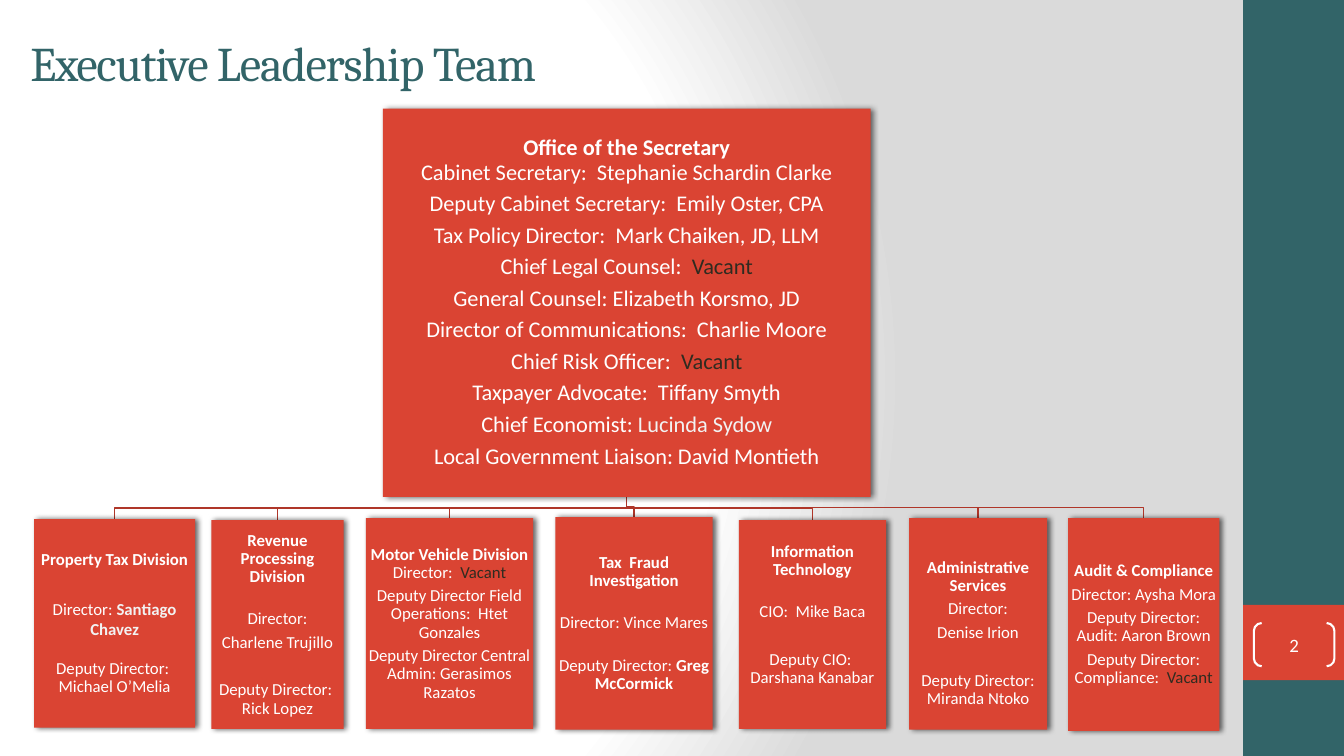
from dataclasses import dataclass

from pptx import Presentation
from pptx.dml.color import RGBColor
from pptx.enum.shapes import MSO_SHAPE
from pptx.enum.text import MSO_ANCHOR, PP_ALIGN
from pptx.oxml import parse_xml
from pptx.oxml.ns import nsdecls, qn
from pptx.util import Cm, Pt

RECTANGLE = MSO_SHAPE.RECTANGLE
DOUBLE_BRACKET = MSO_SHAPE.DOUBLE_BRACKET
MIDDLE = MSO_ANCHOR.MIDDLE
CENTER, LEFT = PP_ALIGN.CENTER, PP_ALIGN.LEFT

TEAL = RGBColor(0x32, 0x64, 0x68)
RED = RGBColor(0xDA, 0x44, 0x33)
DARK_RED = RGBColor(0xAF, 0x36, 0x29)
WHITE = RGBColor(0xFF, 0xFF, 0xFF)
OFF_WHITE = RGBColor(0xF2, 0xF2, 0xF2)
DARK = RGBColor(0x2F, 0x2B, 0x20)

BODY_FONT, TITLE_FONT = "Calibri", "Cambria"
LINE_GAP = 13.2   # one line of division text, in points
BLOCK_GAP = 17.2  # one line and its paragraph spacing


@dataclass
class Entry:
    """One paragraph of a box: a plain part, then an optional accented part."""
    text: str
    accent: str = ""
    bold: bool = False
    accent_bold: bool = False
    accent_color: RGBColor = WHITE
    before: float = 0
    after_ratio: float = 0.33
    line_spacing: float = 0.9


def heading(text, **options):
    return Entry(text, bold=True, **options)


def vacant(text, **options):
    return Entry(text, "Vacant", accent_color=DARK, **options)


@dataclass
class Unit:
    """A box of the chart: left, top, width and height in centimetres."""
    box: tuple
    entries: list
    size: float = 12
    inset_top: float = 0.03
    inset_bottom: float = 0.03


OFFICE = Unit((9.65, 2.74, 12.29, 9.78), [
    heading("Office of the Secretary", after_ratio=0),
    Entry("Cabinet Secretary:  Stephanie Schardin Clarke"),
    Entry("Deputy Cabinet Secretary:  Emily Oster, CPA"),
    Entry("Tax Policy Director:  Mark Chaiken, JD, LLM"),
    vacant("Chief Legal Counsel:  "),
    Entry("General Counsel: Elizabeth Korsmo, JD"),
    Entry("Director of Communications:  Charlie Moore"),
    vacant("Chief Risk Officer:  "),
    Entry("Taxpayer Advocate:  Tiffany Smyth"),
    Entry("Chief Economist: ", "Lucinda Sydow", accent_color=OFF_WHITE),
    Entry("Local Government Liaison: David Montieth"),
], size=16)

DIVISIONS = [
    Unit((0.86, 13.08, 4.06, 5.26), [
        heading("Property Tax Division"),
        Entry("Director: ", "Santiago Chavez", accent_bold=True,
              accent_color=OFF_WHITE, before=BLOCK_GAP, after_ratio=0, line_spacing=1),
        Entry("Deputy Director:  Michael O’Melia", before=14.6),
    ]),
    Unit((5.33, 13.11, 3.33, 5.26), [
        heading("Revenue Processing Division"),
        Entry("Director:", before=LINE_GAP),
        Entry("Charlene Trujillo"),
        Entry("Deputy Director:  Rick Lopez", before=BLOCK_GAP),
    ]),
    Unit((9.22, 13.06, 4.22, 5.31), [
        heading("Motor Vehicle Division", after_ratio=0),
        vacant("Director:  "),
        Entry("Deputy Director Field Operations:  Htet Gonzales"),
        Entry("Deputy Director Central Admin: Gerasimos Razatos"),
    ]),
    Unit((14, 13.03, 3.96, 5.36), [
        heading("Tax  Fraud Investigation"),
        Entry("Director: Vince Mares", before=LINE_GAP),
        Entry("Deputy Director: ", "Greg McCormick", accent_bold=True, before=LINE_GAP),
    ]),
    Unit((18.62, 13.11, 3.71, 5.26), [
        heading("Information Technology"),
        Entry("CIO:  Mike Baca", before=LINE_GAP),
        Entry("Deputy CIO:  Darshana Kanabar", before=BLOCK_GAP),
    ], inset_bottom=0.5),
    Unit((22.91, 13.06, 3.48, 5.33), [
        heading("Administrative Services"),
        Entry("Director:"),
        Entry("Denise Irion"),
        Entry("Deputy Director: Miranda Ntoko", before=BLOCK_GAP),
    ], inset_top=0.5),
    Unit((26.92, 13.06, 3.81, 5.36), [
        heading("Audit & Compliance"),
        Entry("Director: Aysha Mora"),
        Entry("Deputy Director: Audit: Aaron Brown"),
        vacant("Deputy Director: Compliance:  "),
    ]),
]


def format_run(run, size, color, bold=False, name=BODY_FONT):
    run.font.name = name
    run.font.size = Pt(size)
    run.font.bold = bold
    run.font.color.rgb = color


def add_panel(slide, box, color):
    shape = slide.shapes.add_shape(RECTANGLE, *map(Cm, box))
    shape.shadow.inherit = False
    shape.fill.solid()
    shape.fill.fore_color.rgb = color
    shape.line.fill.background()
    return shape


def set_background(slide):
    slide.background.fill.gradient()
    gradient = slide.element.find(".//" + qn("a:gradFill"))
    stops = "".join(
        f'<a:gs pos="{position}"><a:srgbClr val="{color}"/></a:gs>'
        for position, color in ((0, "FFFFFF"), (75000, "FFFFFF"), (100000, "DADADA")))
    gradient.getparent().replace(gradient, parse_xml(
        f'<a:gradFill {nsdecls("a")} rotWithShape="1"><a:gsLst>{stops}</a:gsLst>'
        '<a:path path="circle"><a:fillToRect l="20000" t="50000" r="100000" b="50000"/>'
        '</a:path></a:gradFill>'))


def add_sidebar(slide, left, width, height):
    add_panel(slide, (left, 0, width, height), TEAL)
    add_panel(slide, (left, 15.24, width, 1.9), RED)
    # Page number in brackets
    number = slide.shapes.add_shape(
        DOUBLE_BRACKET, Cm(left + 0.27), Cm(15.7), Cm(2.03), Cm(1.09))
    number.adjustments[0] = 0.18
    number.shadow.inherit = False
    number.fill.background()
    number.line.color.rgb = WHITE
    number.line.width = Pt(1.5)
    frame = number.text_frame
    frame.margin_left = frame.margin_right = frame.margin_top = frame.margin_bottom = 0
    frame.vertical_anchor = MIDDLE
    frame.text = "2"
    frame.paragraphs[0].alignment = CENTER
    format_run(frame.paragraphs[0].runs[0], 13.5, WHITE)


def add_title(slide, box):
    title = slide.shapes.title
    title.left, title.top, title.width, title.height = map(Cm, box)
    title.text_frame.text = "Executive Leadership Team"
    title.text_frame.vertical_anchor = MIDDLE
    paragraph = title.text_frame.paragraphs[0]
    paragraph.alignment = LEFT
    format_run(paragraph.runs[0], 34.5, TEAL, name=TITLE_FONT)
    title.element.find(".//" + qn("a:rPr")).set("spc", "-80")


def add_branch(slide, parent, child):
    """Stepped line from the foot of the parent to the head of the child."""
    left, top, width, height = parent.box
    start_x, start_y = left + width / 2, top + height
    end_x, end_y = child.box[0] + child.box[2] / 2, child.box[1]
    middle_y = (start_y + end_y) / 2
    builder = slide.shapes.build_freeform(Cm(start_x), Cm(start_y))
    builder.add_line_segments(
        [(Cm(x), Cm(y)) for x, y in ((start_x, middle_y), (end_x, middle_y), (end_x, end_y))],
        close=False)
    branch = builder.convert_to_shape()
    branch.shadow.inherit = False
    branch.fill.background()
    branch.line.color.rgb = DARK_RED
    branch.line.width = Pt(1)


def add_unit(slide, unit):
    shape = add_panel(slide, unit.box, RED)
    shape.element.find(".//" + qn("a:effectLst")).append(parse_xml(
        f'<a:outerShdw {nsdecls("a")} blurRad="{Pt(4)}" dist="{Pt(2)}" dir="0">'
        '<a:srgbClr val="000000"><a:alpha val="60000"/></a:srgbClr></a:outerShdw>'))
    frame = shape.text_frame
    frame.word_wrap = True
    frame.vertical_anchor = MIDDLE
    frame.margin_left = frame.margin_right = Cm(0.03)
    frame.margin_top, frame.margin_bottom = Cm(unit.inset_top), Cm(unit.inset_bottom)
    frame.text = "\n".join(entry.text for entry in unit.entries)
    for paragraph, entry in zip(frame.paragraphs, unit.entries):
        paragraph.alignment = CENTER
        paragraph.line_spacing = entry.line_spacing
        paragraph.space_before = Pt(entry.before)
        paragraph.space_after = Pt(entry.after_ratio * unit.size)
        format_run(paragraph.runs[0], unit.size, WHITE, entry.bold)
        if entry.accent:
            run = paragraph.add_run()
            run.text = entry.accent
            format_run(run, unit.size, entry.accent_color, entry.accent_bold)


def add_organization_chart(slide, office, divisions):
    for division in divisions:
        add_branch(slide, office, division)
    for unit in [office, *divisions]:
        add_unit(slide, unit)


def main():
    presentation = Presentation()
    presentation.slide_width, presentation.slide_height = Cm(33.87), Cm(19.05)
    slide = presentation.slides.add_slide(presentation.slide_layouts[5])
    set_background(slide)
    add_sidebar(slide, 31.33, 2.54, 19.05)
    add_organization_chart(slide, OFFICE, DIVISIONS)
    add_title(slide, (0.51, 0.36, 30.4, 2.39))
    presentation.save("out.pptx")


if __name__ == "__main__":
    main()
